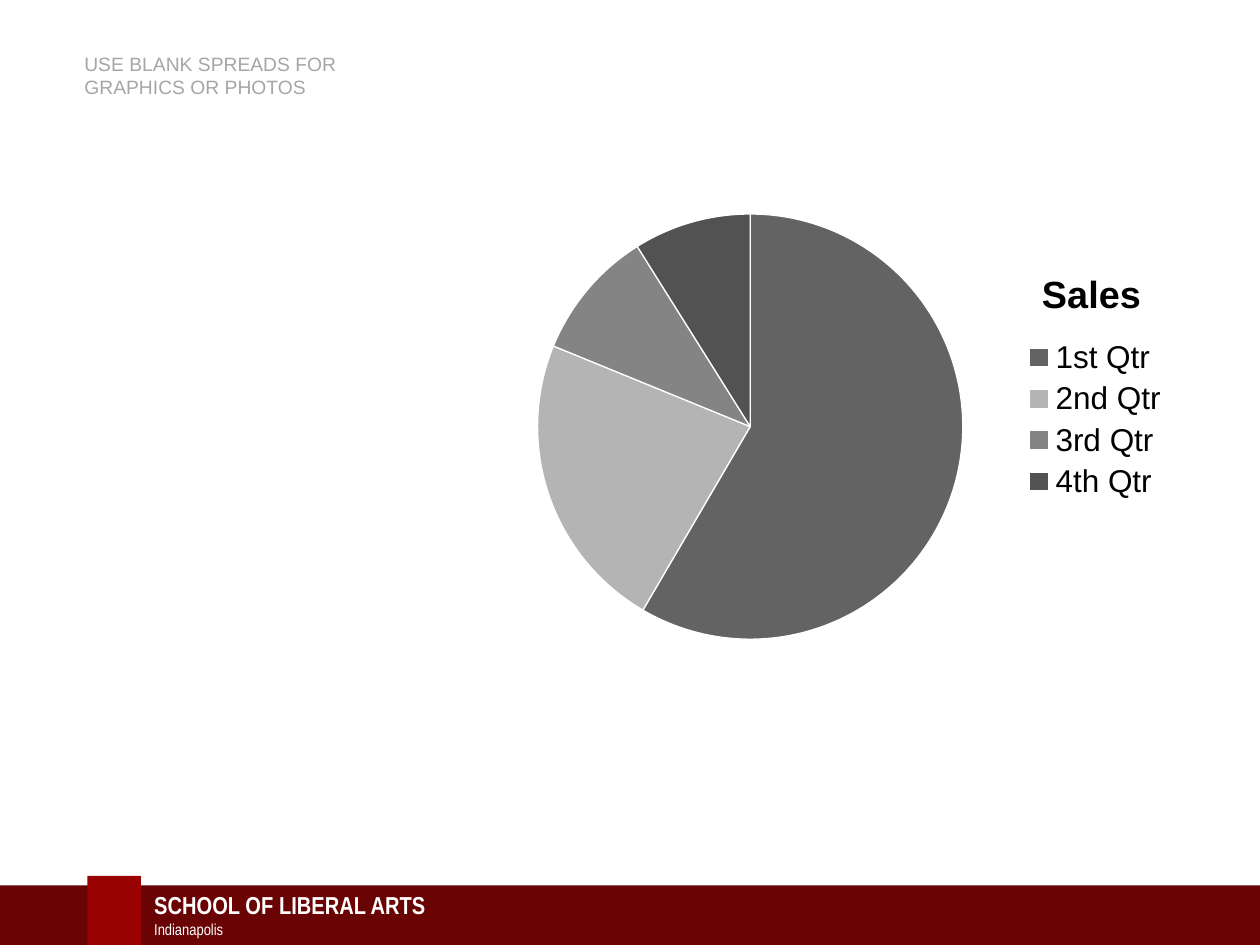
from lxml import etree
from pptx import Presentation
from pptx.chart.data import CategoryChartData
from pptx.dml.color import RGBColor
from pptx.enum.chart import XL_CHART_TYPE as ChartType, XL_LEGEND_POSITION as LegendPosition
from pptx.enum.shapes import MSO_SHAPE as Shape
from pptx.enum.text import MSO_ANCHOR as Anchor, MSO_AUTO_SIZE as AutoSize, PP_ALIGN as Align
from pptx.oxml.ns import qn
from pptx.util import Pt

WHITE = RGBColor(0xFF, 0xFF, 0xFF)
BLACK = RGBColor(0x00, 0x00, 0x00)
MAROON = RGBColor(0x69, 0x03, 0x04)
CRIMSON = RGBColor(0x99, 0x00, 0x00)
SILVER = RGBColor(0xA6, 0xA6, 0xA6)
QUARTER_GREYS = [RGBColor(level, level, level) for level in (0x63, 0xB4, 0x84, 0x52)]


class SlideBuilder:
    font = "Arial"
    narrow_font = "Arial Narrow"

    def __init__(self, deck):
        self.slide = deck.slides.add_slide(deck.slide_layouts[5])

    def add_words(self, paragraph, text, size, color, font, bold=False):
        paragraph.alignment = Align.LEFT
        run = paragraph.add_run()
        run.text = text
        run.font.size = Pt(size)
        run.font.color.rgb = color
        run.font.name = font
        run.font.bold = bold

    def title(self, text, left, top, width, height):
        heading = self.slide.shapes.title
        heading.left, heading.top = Pt(left), Pt(top)
        heading.width, heading.height = Pt(width), Pt(height)
        frame = heading.text_frame
        frame.word_wrap = True
        frame.auto_size = AutoSize.NONE
        frame.vertical_anchor = Anchor.TOP
        self.add_words(frame.paragraphs[0], text, 11, SILVER, self.font)

    def block(self, color, left, top, width, height):
        block = self.slide.shapes.add_shape(
            Shape.RECTANGLE, Pt(left), Pt(top), Pt(width), Pt(height))
        block.shadow.inherit = False
        block.fill.solid()
        block.fill.fore_color.rgb = color
        block.line.fill.background()

    def signature(self, school, campus, left, top, width, height):
        box = self.slide.shapes.add_textbox(Pt(left), Pt(top), Pt(width), Pt(height))
        frame = box.text_frame
        frame.word_wrap = True
        frame.vertical_anchor = Anchor.MIDDLE
        self.add_words(frame.paragraphs[0], school, 14, WHITE, self.narrow_font, True)
        self.add_words(frame.add_paragraph(), campus, 9, WHITE, self.narrow_font)

    def arrange(self, part, index, **settings):
        for old in part.findall(qn("c:layout")):
            part.remove(old)
        layout = etree.Element(qn("c:layout"))
        manual = etree.SubElement(layout, qn("c:manualLayout"))
        for name, value in settings.items():
            etree.SubElement(manual, qn(f"c:{name}")).set("val", str(value))
        part.insert(index, layout)

    def pie(self, name, values, colors, left, top, width, height):
        data = CategoryChartData()
        data.categories = list(values)
        data.add_series(name, list(values.values()))
        chart = self.slide.shapes.add_chart(
            ChartType.PIE, Pt(left), Pt(top), Pt(width), Pt(height), data).chart
        chart.font.name = self.font
        chart.font.size = Pt(18)
        chart.font.color.rgb = BLACK

        chart.has_title = True
        heading = chart.chart_title
        self.add_words(heading.text_frame.paragraphs[0], name, 21.6, BLACK, self.font, True)
        heading.include_in_layout = False

        chart.has_legend = True
        chart.legend.position = LegendPosition.RIGHT
        chart.legend.include_in_layout = False

        plot = chart.plots[0]
        plot.vary_by_categories = True
        for index, color in enumerate(colors):
            quarter = plot.series[0].points[index].format
            quarter.fill.solid()
            quarter.fill.fore_color.rgb = color
            quarter.line.color.rgb = WHITE
            quarter.line.width = Pt(0.75)

        edges = dict(xMode="edge", yMode="edge")
        plot_area = chart.element.find(".//" + qn("c:plotArea"))
        self.arrange(plot_area, 0, layoutTarget="inner", **edges,
                     x=0.2, y=0.11, w=0.53, h=0.8)
        title_part = chart.element.find(".//" + qn("c:title"))
        self.arrange(title_part, 1, **edges, x=0.82, y=0.28)
        legend_part = chart.element.find(".//" + qn("c:legend"))
        self.arrange(legend_part, 1, **edges, x=0.8, y=0.38, w=0.19, h=0.24)


def main():
    deck = Presentation()
    deck.slide_width, deck.slide_height = Pt(720), Pt(540)
    builder = SlideBuilder(deck)
    builder.block(MAROON, -2, 506, 726, 36)
    builder.block(CRIMSON, 50, 500.5, 30.5, 41.5)
    builder.signature("SCHOOL OF LIBERAL ARTS", "Indianapolis", 81, 505, 284, 35)
    sales = {"1st Qtr": 59, "2nd Qtr": 23, "3rd Qtr": 10, "4th Qtr": 9}
    builder.pie("Sales", sales, QUARTER_GREYS, 215.5, 36, 458.5, 407.5)
    builder.title("USE BLANK SPREADS FOR GRAPHICS OR PHOTOS", 41, 26, 200, 34)
    deck.save("out.pptx")


if __name__ == "__main__":
    main()
